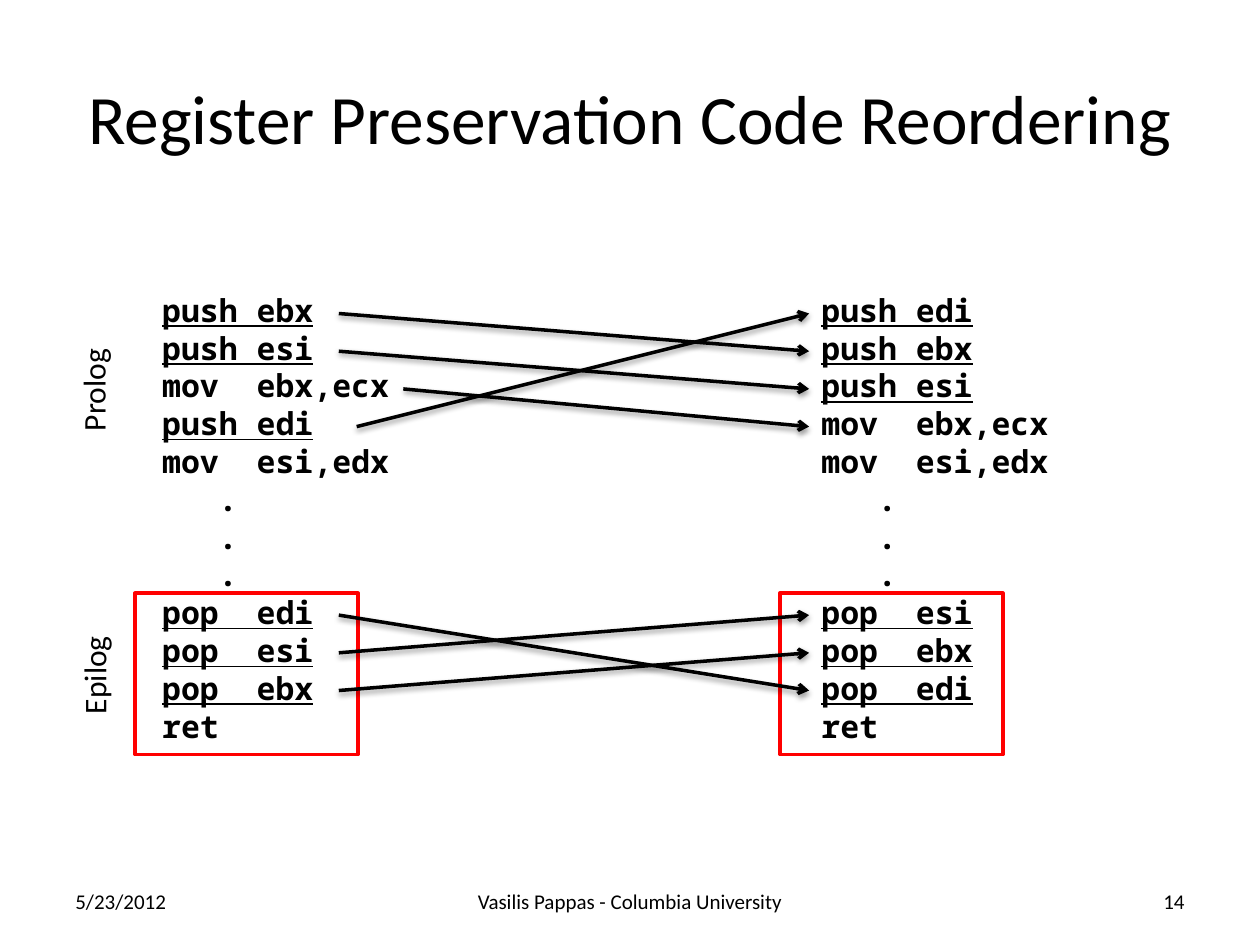
from dataclasses import dataclass

from lxml.etree import SubElement
from pptx import Presentation
from pptx.dml.color import RGBColor
from pptx.enum.shapes import MSO_CONNECTOR as Connector, MSO_SHAPE as Shape
from pptx.enum.text import MSO_ANCHOR as Anchor, PP_ALIGN as Align
from pptx.oxml.ns import qn
from pptx.util import Cm, Pt


@dataclass(frozen=True)
class Theme:
    ink: RGBColor = RGBColor(0, 0, 0)
    highlight: RGBColor = RGBColor(255, 0, 0)
    text_font: str = "Calibri"
    code_font: str = "Noto Sans Mono"
    title_size: float = 39.6
    body_size: float = 18
    footer_size: float = 12
    line_width: float = 2


THEME = Theme()
ROW_HEIGHT = 0.76
FIRST_ROW = 0.58
DOT_INDENT = 1.14

CODE_TOP, CODE_WIDTH, CODE_HEIGHT = 5.74, 6.25, 9.5
BEFORE_LEFT, AFTER_LEFT = 3.02, 16.31
DOTS = [".", ".", "."]
BEFORE = ["push ebx", "push esi", "mov  ebx,ecx", "push edi", "mov  esi,edx",
          *DOTS, "pop  edi", "pop  esi", "pop  ebx", "ret"]
AFTER = ["push edi", "push ebx", "push esi", "mov  ebx,ecx", "mov  esi,edx",
         *DOTS, "pop  esi", "pop  ebx", "pop  edi", "ret"]
# Instructions that move, each with the x where its arrow starts
MOVES = {"pop  edi": 6.83, "pop  esi": 6.83, "pop  ebx": 6.83,
         "push ebx": 6.83, "push esi": 6.83, "mov  ebx,ecx": 8.13,
         "push edi": 7.19}


def style_runs(paragraph, size, font=THEME.text_font, bold=False, underline=False):
    for run in paragraph.runs:
        run.font.name = font
        run.font.size = Pt(size)
        run.font.color.rgb = THEME.ink
        run.font.bold = bold
        run.font.underline = underline


def add_text(slide, box, text, size, align=Align.LEFT, anchor=Anchor.TOP, wrap=True):
    shape = slide.shapes.add_textbox(*map(Cm, box))
    frame = shape.text_frame
    frame.word_wrap = wrap
    frame.vertical_anchor = anchor
    frame.text = text
    frame.paragraphs[0].alignment = align
    style_runs(frame.paragraphs[0], size)
    return shape


def add_title(slide, box, text):
    title = slide.shapes.title
    title.left, title.top, title.width, title.height = map(Cm, box)
    title.text_frame.text = text
    title.text_frame.vertical_anchor = Anchor.MIDDLE
    paragraph = title.text_frame.paragraphs[0]
    paragraph.alignment = Align.CENTER
    style_runs(paragraph, THEME.title_size)


def add_footer(slide, box, date, author, number):
    left, top, width, height = box
    side, middle = 5.92, 8.05
    parts = [(date, left, side, Align.LEFT),
             (author, left + (width - middle) / 2, middle, Align.CENTER),
             (number, left + width - side, side, Align.RIGHT)]
    for text, x, part_width, align in parts:
        add_text(slide, (x, top, part_width, height), text,
                 THEME.footer_size, align, Anchor.MIDDLE)


def add_listing(slide, box, lines, frame_offset):
    """Place the code and the red frame around its epilog."""
    left, top, _, _ = box
    frame = slide.shapes.add_shape(
        Shape.RECTANGLE, Cm(left + frame_offset), Cm(top + 6.22), Cm(4.5), Cm(3.25))
    frame.shadow.inherit = False
    frame.fill.background()
    frame.line.color.rgb = THEME.highlight
    frame.line.width = Pt(THEME.line_width)

    code = add_text(slide, box, "\n".join(lines), THEME.body_size)
    for paragraph in code.text_frame.paragraphs:
        style_runs(paragraph, THEME.body_size, THEME.code_font, bold=True,
                   underline=paragraph.text.startswith(("push", "pop")))
        if paragraph.text == ".":
            paragraph._p.get_or_add_pPr().set("marL", str(Cm(DOT_INDENT)))


def add_arrow(slide, start, end):
    arrow = slide.shapes.add_connector(Connector.STRAIGHT, *map(Cm, start + end))
    arrow.line.color.rgb = THEME.ink
    arrow.line.width = Pt(THEME.line_width)
    SubElement(arrow.line._get_or_add_ln(), qn("a:tailEnd"), type="arrow")
    effects = SubElement(arrow._element.spPr, qn("a:effectLst"))
    shadow = SubElement(effects, qn("a:outerShdw"), blurRad=str(Pt(3.1)),
                        dist=str(Pt(1.6)), dir="5400000", rotWithShape="0")
    color = SubElement(shadow, qn("a:srgbClr"), val=str(THEME.ink))
    SubElement(color, qn("a:alpha"), val="38000")


def add_moves(slide, top, end_x):
    def row_y(lines, instruction):
        return top + FIRST_ROW + ROW_HEIGHT * lines.index(instruction)

    for instruction, start_x in MOVES.items():
        add_arrow(slide, (start_x, row_y(BEFORE, instruction)),
                  (end_x, row_y(AFTER, instruction)))


def add_side_label(slide, box, text):
    label = add_text(slide, box, text, THEME.body_size, wrap=False)
    label.rotation = 270


def main():
    presentation = Presentation()
    presentation.slide_width, presentation.slide_height = Cm(25.4), Cm(19.05)
    slide = presentation.slides.add_slide(presentation.slide_layouts[5])

    add_title(slide, (1.27, 0.76, 22.86, 3.18), "Register Preservation Code Reordering")
    add_footer(slide, (1.27, 17.65, 22.86, 1.02), "5/23/2012",
               "Vasilis Pappas - Columbia University", "14")
    for left, lines, frame_offset in [(BEFORE_LEFT, BEFORE, -0.3),
                                      (AFTER_LEFT, AFTER, -0.59)]:
        add_listing(slide, (left, CODE_TOP, CODE_WIDTH, CODE_HEIGHT),
                    lines, frame_offset)
    add_moves(slide, CODE_TOP, AFTER_LEFT)
    add_side_label(slide, (0.79, 7.34, 2.18, 1.02), "Prolog")
    add_side_label(slide, (0.84, 13.08, 2.11, 1.02), "Epilog")

    presentation.save("out.pptx")


if __name__ == "__main__":
    main()
